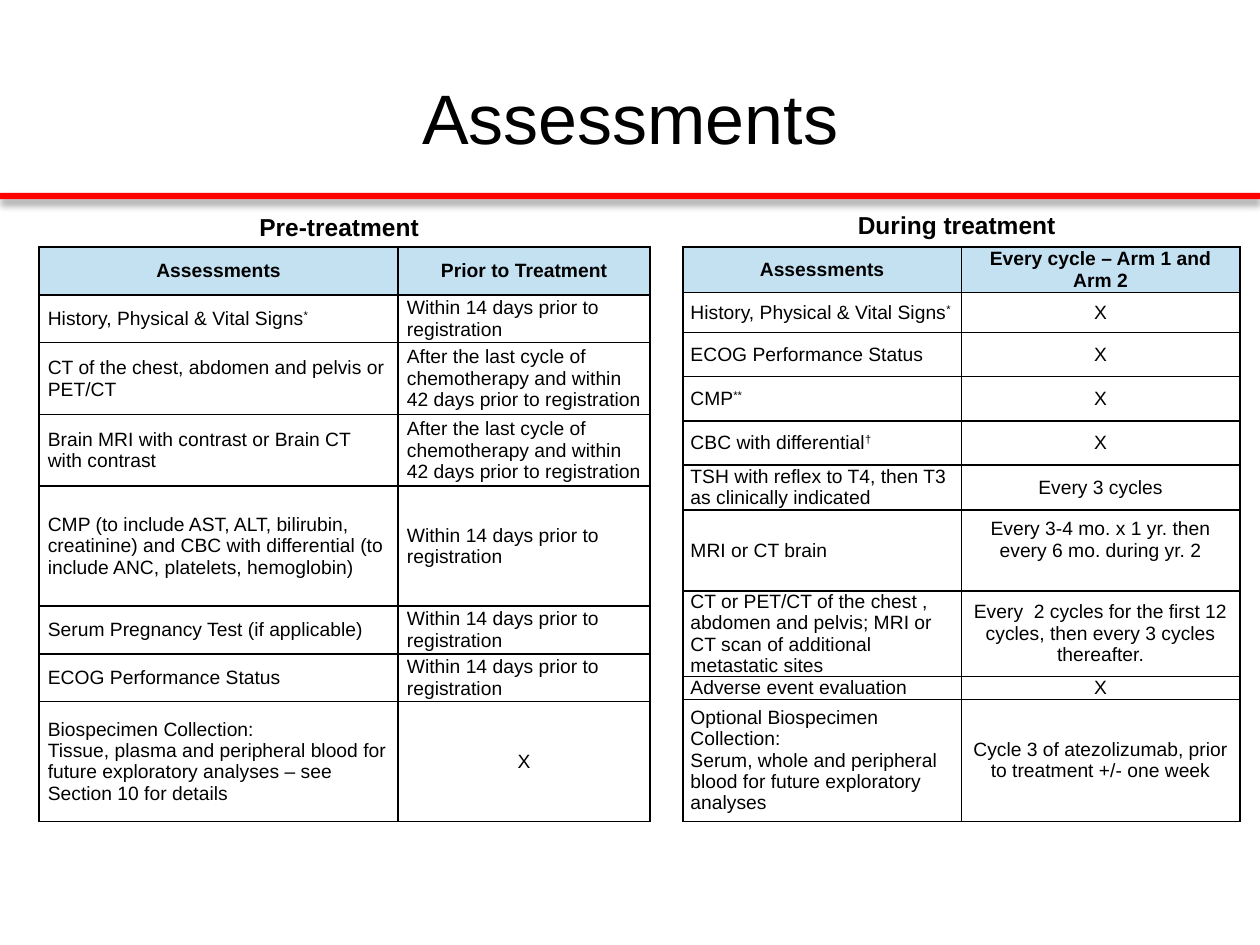
from lxml.etree import SubElement
from pptx import Presentation
from pptx.dml.color import RGBColor
from pptx.enum.shapes import MSO_SHAPE
from pptx.enum.text import MSO_ANCHOR, PP_ALIGN
from pptx.oxml.ns import qn
from pptx.util import Inches, Pt

BLACK = RGBColor(0x00, 0x00, 0x00)
RED = RGBColor(0xFF, 0x00, 0x00)
HEADER_BLUE = RGBColor(0xC4, 0xE1, 0xF2)
FONT = "Arial"
NOTE = "^"
LINE_HEIGHT = 0.17

WITHIN_14 = "Within 14 days prior to registration"
AFTER_CHEMO = ("After the last cycle of chemotherapy and within "
               "42 days prior to registration")
PRE_TREATMENT = [
    (0.38, "Assessments", "Prior to Treatment"),
    (0.38, "History, Physical & Vital Signs^*", WITHIN_14),
    (0.57, "CT of the chest, abdomen and pelvis or PET/CT", AFTER_CHEMO),
    (0.57, "Brain MRI with contrast or Brain CT with contrast", AFTER_CHEMO),
    (0.95, "CMP (to include AST, ALT, bilirubin, creatinine) and CBC with "
           "differential (to include ANC, platelets, hemoglobin)", WITHIN_14),
    (0.38, "Serum Pregnancy Test (if applicable)", WITHIN_14),
    (0.38, "ECOG Performance Status", WITHIN_14),
    (0.95, "Biospecimen Collection:\nTissue, plasma and peripheral blood for "
           "future exploratory analyses – see Section 10 for details", "X"),
]
DURING_TREATMENT = [
    (0.36, "Assessments", "Every cycle – Arm 1 and Arm 2"),
    (0.32, "History, Physical & Vital Signs^*", "X"),
    (0.35, "ECOG Performance Status", "X"),
    (0.35, "CMP^**", "X"),
    (0.35, "CBC with differential^†", "X"),
    (0.36, "TSH with reflex to T4, then T3 as clinically indicated",
     "Every 3 cycles"),
    (0.64, "MRI or CT brain",
     "Every 3-4 mo. x 1 yr. then every 6 mo. during yr. 2"),
    (0.64, "CT or PET/CT of the chest , abdomen and pelvis; MRI or CT scan of "
           "additional metastatic sites",
     "Every  2 cycles for the first 12 cycles, then every 3 cycles thereafter."),
    (0.18, "Adverse event evaluation", "X"),
    (0.97, "Optional Biospecimen Collection:\nSerum, whole and peripheral "
           "blood for future exploratory analyses",
     "Cycle 3 of atezolizumab, prior to treatment +/- one week"),
]


def style_font(font, size, bold=False):
    font.name = FONT
    font.size = Pt(size)
    font.bold = bold
    font.color.rgb = BLACK


def add_title(slide, left, top, width, height):
    title = slide.shapes.title
    title.left, title.top = Inches(left), Inches(top)
    title.width, title.height = Inches(width), Inches(height)
    frame = title.text_frame
    frame.text = "Assessments"
    frame.vertical_anchor = MSO_ANCHOR.MIDDLE
    frame.paragraphs[0].alignment = PP_ALIGN.CENTER
    style_font(frame.paragraphs[0].runs[0].font, 40)


def add_rule(slide, left, top, width, height):
    rule = slide.shapes.add_shape(MSO_SHAPE.RECTANGLE, Inches(left), Inches(top),
                                  Inches(width), Inches(height))
    rule.fill.solid()
    rule.fill.fore_color.rgb = RED
    rule.line.fill.background()
    rule.shadow.inherit = False
    effects = rule.element.spPr.find(qn("a:effectLst"))
    shadow = SubElement(effects, qn("a:outerShdw"), blurRad=str(Pt(4)),
                        dist=str(Pt(3)), dir="5400000", rotWithShape="0")
    color = SubElement(shadow, qn("a:srgbClr"), val=str(BLACK))
    SubElement(color, qn("a:alpha"), val="40000")


def add_caption(slide, text, left, top, width, height):
    caption = slide.shapes.add_textbox(Inches(left), Inches(top),
                                       Inches(width), Inches(height))
    frame = caption.text_frame
    frame.word_wrap = True
    frame.text = text
    style_font(frame.paragraphs[0].runs[0].font, 14, bold=True)


def add_borders(cell):
    properties = cell._tc.get_or_add_tcPr()
    for side in ("lnL", "lnR", "lnT", "lnB"):
        border = SubElement(properties, qn(f"a:{side}"), w=str(Pt(1)))
        fill = SubElement(border, qn("a:solidFill"))
        SubElement(fill, qn("a:srgbClr"), val=str(BLACK))


def write_cell(cell, text, side_margin, centred, is_header):
    add_borders(cell)
    if is_header:
        cell.fill.solid()
        cell.fill.fore_color.rgb = HEADER_BLUE
    else:
        cell.fill.background()
    cell.margin_left = cell.margin_right = Inches(side_margin)
    cell.margin_top = cell.margin_bottom = 0
    cell.vertical_anchor = MSO_ANCHOR.MIDDLE
    body, _, mark = text.partition(NOTE)
    cell.text_frame.text = body
    if mark:
        note = cell.text_frame.paragraphs[0].add_run()
        note.text = mark
        note.font._element.set("baseline", "30000")
    for paragraph in cell.text_frame.paragraphs:
        paragraph.alignment = PP_ALIGN.CENTER if centred else PP_ALIGN.LEFT
        for run in paragraph.runs:
            style_font(run.font, 11, bold=is_header)


def add_schedule(slide, schedule, left, top, widths, side_margin, centre_timing):
    height = sum(row[0] for row in schedule)
    table = slide.shapes.add_table(len(schedule), len(widths), Inches(left),
                                   Inches(top), Inches(sum(widths)),
                                   Inches(height)).table
    table.first_row = table.horz_banding = False
    for column, width in zip(table.columns, widths):
        column.width = Inches(width)
    for index, (row_height, assessment, timing) in enumerate(schedule):
        table.rows[index].height = Inches(row_height)
        is_header = index == 0
        write_cell(table.cell(index, 0), assessment, side_margin,
                   is_header, is_header)
        write_cell(table.cell(index, 1), timing, side_margin,
                   is_header or centre_timing or timing == "X", is_header)
    return table


def main():
    presentation = Presentation()
    presentation.slide_width, presentation.slide_height = Inches(10), Inches(7.5)
    slide = presentation.slides.add_slide(presentation.slide_layouts[5])
    add_rule(slide, 0, 1.53, 10, 0.05)
    add_title(slide, 0.5, 0.3, 9, 1.25)
    add_schedule(slide, PRE_TREATMENT, 0.31, 1.96, (2.85, 2), 0.07, False)
    during = add_schedule(slide, DURING_TREATMENT, 5.42, 1.96, (2.21, 2.21),
                          0.06, True)
    during.cell(6, 1).margin_bottom = Inches(LINE_HEIGHT)
    add_caption(slide, "Pre-treatment", 1.96, 1.63, 2.83, 0.34)
    add_caption(slide, "During treatment", 6.71, 1.62, 1.83, 0.34)
    presentation.save("out.pptx")


if __name__ == "__main__":
    main()
